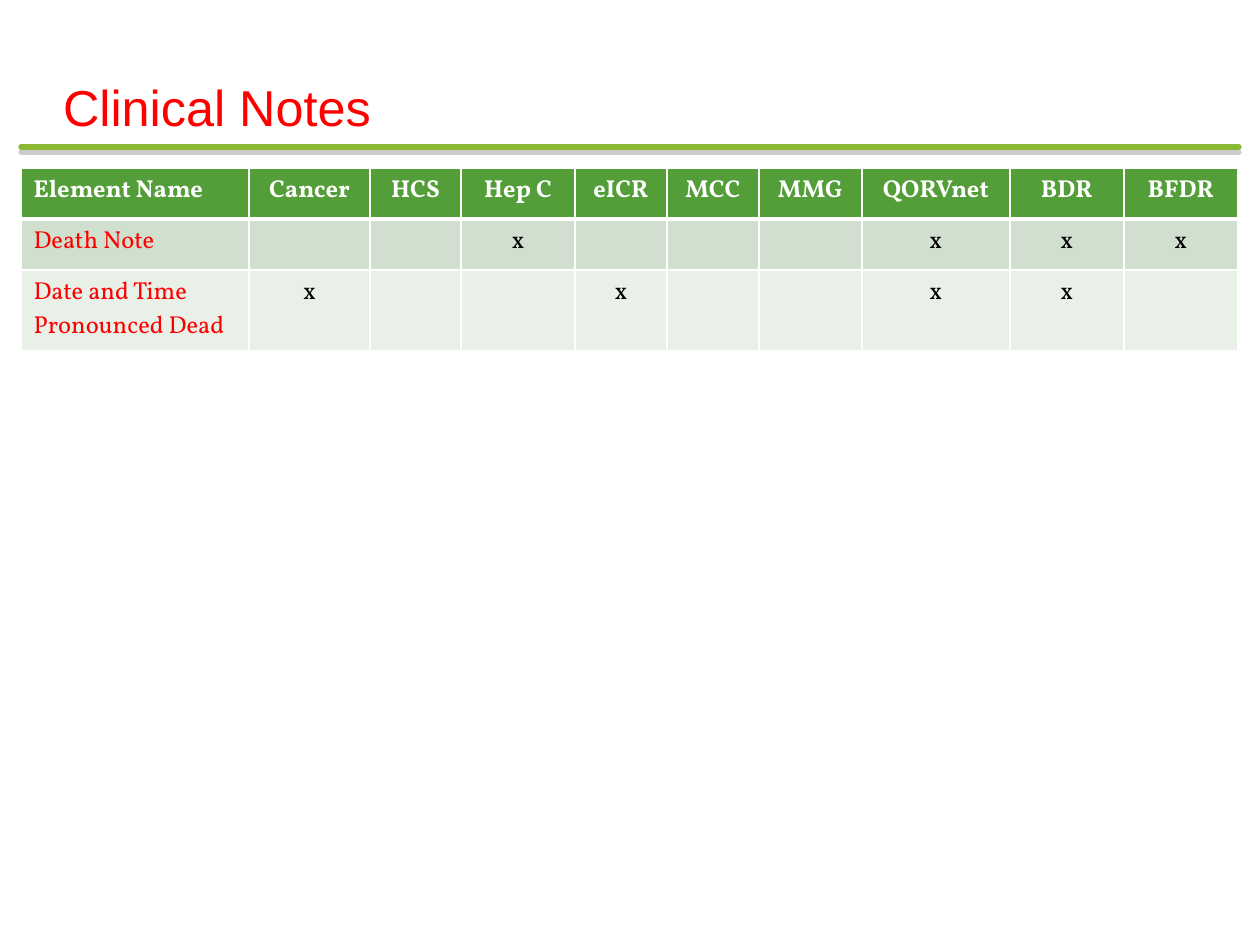
import dataclasses

import lxml.etree
import pptx
import pptx.dml.color
import pptx.enum.shapes
import pptx.enum.text
import pptx.oxml.ns
import pptx.util

EMU_PER_PX = 914400 // 126


@dataclasses.dataclass(frozen=True)
class Theme:
    title_font: str = "Arial"
    table_font: str = "Vollkorn"
    title_size: float = 28.8
    table_size: float = 14
    accent: str = "FF0000"
    rule: str = "8AB833"
    rule_shadow: str = "808080"
    header_fill: str = "549E39"
    header_text: str = "FFFFFF"
    mark: str = "000000"
    border: str = "FFFFFF"
    band_fills: tuple = ("D1DFCE", "E9F0E8")


THEME = Theme()
COLUMNS = {
    "Element Name": 228,
    "Cancer": 121,
    "HCS": 91,
    "Hep C": 114,
    "eICR": 92,
    "MCC": 92,
    "MMG": 103,
    "QORVnet": 148,
    "BDR": 114,
    "BFDR": 114,
}
ELEMENTS = {
    "Death Note": {"Hep C", "QORVnet", "BDR", "BFDR"},
    "Date and Time Pronounced Dead": {"Cancer", "eICR", "QORVnet", "BDR"},
}
ROW_HEIGHT = 51


def px(length):
    return pptx.util.Emu(length * EMU_PER_PX)


def rgb(value):
    return pptx.dml.color.RGBColor.from_string(value)


def style_paragraph(paragraph, font_name, size, color, bold, alignment):
    paragraph.alignment = alignment
    font = paragraph.font
    font.name = font_name
    font.size = pptx.util.Pt(size)
    font.bold = bold
    font.color.rgb = rgb(color)


def add_title(slide, text):
    title = slide.shapes.title
    title.left, title.top, title.width, title.height = map(px, (63, 64, 1134, 73))
    frame = title.text_frame
    frame.text = text
    frame.word_wrap = True
    frame.auto_size = pptx.enum.text.MSO_AUTO_SIZE.NONE
    frame.vertical_anchor = pptx.enum.text.MSO_ANCHOR.BOTTOM
    frame.margin_left = frame.margin_right = frame.margin_bottom = 0
    frame.margin_top = pptx.util.Inches(0.05)
    style_paragraph(frame.paragraphs[0], THEME.title_font, THEME.title_size,
                    THEME.accent, False, pptx.enum.text.PP_ALIGN.LEFT)


def add_rule(slide):
    rule = slide.shapes.add_connector(
        pptx.enum.shapes.MSO_CONNECTOR.STRAIGHT, px(21), px(147), px(1239), px(147))
    rule.line.color.rgb = rgb(THEME.rule)
    rule.line.width = pptx.util.Pt(3)
    rule.line._get_or_add_ln().set("cap", "rnd")
    properties = rule._element.spPr
    qn = pptx.oxml.ns.qn
    effects = lxml.etree.SubElement(properties, qn("a:effectLst"))
    shadow = lxml.etree.SubElement(
        effects, qn("a:outerShdw"), blurRad="0", dist=str(pptx.util.Pt(3)),
        dir="5400000", algn="ctr", rotWithShape="0")
    color = lxml.etree.SubElement(shadow, qn("a:srgbClr"), val=THEME.rule_shadow)
    lxml.etree.SubElement(color, qn("a:alpha"), val="40000")


def set_borders(cell, top, bottom):
    qn = pptx.oxml.ns.qn
    properties = cell._tc.get_or_add_tcPr()
    widths = {"a:lnL": 1, "a:lnR": 1, "a:lnT": top, "a:lnB": bottom}
    for index, (tag, width) in enumerate(widths.items()):
        line = lxml.etree.Element(qn(tag), w=str(pptx.util.Pt(width)))
        fill = lxml.etree.SubElement(line, qn("a:solidFill"))
        lxml.etree.SubElement(fill, qn("a:srgbClr"), val=THEME.border)
        properties.insert(index, line)


def fill_row(row, texts, fill, label_color, text_color, bold, top, bottom):
    align = pptx.enum.text.PP_ALIGN
    row.height = px(ROW_HEIGHT)
    for index, (cell, text) in enumerate(zip(row.cells, texts)):
        cell.fill.solid()
        cell.fill.fore_color.rgb = rgb(fill)
        set_borders(cell, top, bottom)
        cell.text = text
        style_paragraph(cell.text_frame.paragraphs[0], THEME.table_font,
                        THEME.table_size, text_color if index else label_color,
                        bold, align.CENTER if index else align.LEFT)


def add_element_table(slide):
    row_count = len(ELEMENTS) + 1
    table = slide.shapes.add_table(
        row_count, len(COLUMNS), px(21), px(168),
        px(sum(COLUMNS.values())), px(ROW_HEIGHT * row_count)).table
    for column, width in zip(table.columns, COLUMNS.values()):
        column.width = px(width)
    header, *body = table.rows
    fill_row(header, COLUMNS, THEME.header_fill,
             THEME.header_text, THEME.header_text, True, 1, 3)
    sources = list(COLUMNS)[1:]
    top = 3
    for row, (name, marked), fill in zip(body, ELEMENTS.items(), THEME.band_fills):
        marks = ["x" if source in marked else "" for source in sources]
        fill_row(row, [name, *marks], fill, THEME.accent, THEME.mark, False, top, 1)
        top = 1


def main():
    presentation = pptx.Presentation()
    presentation.slide_width = px(1260)
    presentation.slide_height = px(945)
    slide = presentation.slides.add_slide(presentation.slide_layouts[5])
    add_rule(slide)
    add_title(slide, "Clinical Notes")
    add_element_table(slide)
    presentation.save("out.pptx")


if __name__ == "__main__":
    main()
